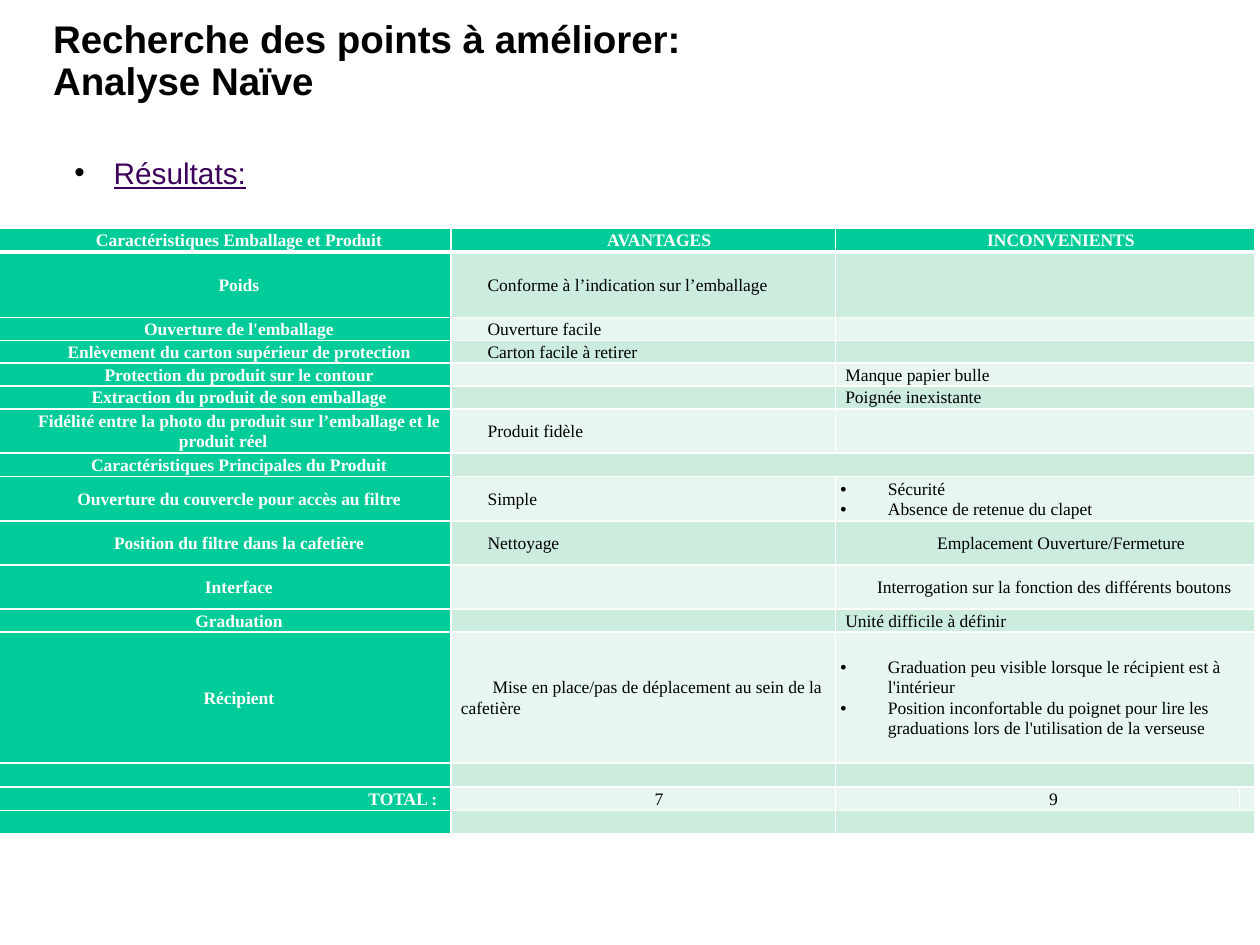
"""Build the slide of good and bad points found by the naive analysis."""
from lxml import etree
from pptx import Presentation
from pptx.dml.color import RGBColor
from pptx.enum.text import MSO_ANCHOR, MSO_AUTO_SIZE, PP_ALIGN
from pptx.oxml.ns import qn
from pptx.util import Cm, Pt

LEFT, MID, RIGHT = PP_ALIGN.LEFT, PP_ALIGN.CENTER, PP_ALIGN.RIGHT
TOP, CENTRE = MSO_ANCHOR.TOP, MSO_ANCHOR.MIDDLE
FIXED = MSO_AUTO_SIZE.NONE

THEME = {
    "sans": "Arial", "serif": "Times New Roman",
    "title": 22, "body": 17, "cell": 10,
    "ink": "000000", "plum": "3C005A", "white": "FFFFFF",
    "green": "00CC99", "bands": ("E7F6EF", "CCECDE"),
    "line": 1, "rule": 3,
}

TITLE = "Recherche des points à améliorer:\vAnalyse Naïve"
LEAD = "Résultats:"

STYLES = {
    "mid": (MID, 0, 0.64),
    "end": (RIGHT, 0, 0),
    "lead": (LEFT, 0, 0.64),
    "near": (LEFT, 0, 0.1),
    "deep": (LEFT, 0.1, 0.64),
    "list": (LEFT, 0.96, -0.96),
}

COLS = (9.19, 7.75, 8.15, 0.28)
ROWS = [
    (0.48, "Caractéristiques Emballage et Produit", ("mid", "AVANTAGES"), ("mid", "INCONVENIENTS")),
    (1.32, "Poids", ("lead", "Conforme à l’indication sur l’emballage"), None),
    (0.46, "Ouverture de l'emballage", ("lead", "Ouverture facile"), None),
    (0.46, "Enlèvement du carton supérieur de protection", ("lead", "Carton facile à retirer"), None),
    (0.46, "Protection du produit sur le contour", None, ("near", "Manque papier bulle")),
    (0.46, "Extraction du produit de son emballage", None, ("near", "Poignée inexistante")),
    (0.89, "Fidélité entre la photo du produit sur l’emballage et le produit réel",
     ("lead", "Produit fidèle"), None),
    (0.48, "Caractéristiques Principales du Produit", None, None),
    (0.89, "Ouverture du couvercle pour accès au filtre", ("lead", "Simple"),
     ("list", "Sécurité\nAbsence de retenue du clapet")),
    (0.89, "Position du filtre dans la cafetière", ("lead", "Nettoyage"),
     ("mid", "Emplacement Ouverture/Fermeture")),
    (0.89, "Interface", None, ("deep", "Interrogation sur la fonction des différents boutons")),
    (0.46, "Graduation", None, ("near", "Unité difficile à définir")),
    (2.64, "Récipient", ("deep", "Mise en place/pas de déplacement au sein de la cafetière"),
     ("list", "Graduation peu visible lorsque le récipient est à l'intérieur\n"
              "Position inconfortable du poignet pour lire les graduations lors de l'utilisation de la verseuse")),
    (0.48, "", None, None),
    (0.48, "TOTAL :", ("mid", "7"), ("mid", "9")),
    (0.46, "", None, None),
]
SECTION, TOTAL = 7, 14


def paint(para, face, size, hue, bold=False, under=False):
    for run in para.runs:
        font = run.font
        font.name, font.size = face, Pt(size)
        font.bold, font.underline = bold, under
        font.color.rgb = RGBColor.from_string(hue)


def indent(para, left, first, bullet=False):
    props = para._p.get_or_add_pPr()
    props.set("marL", str(Cm(left)))
    props.set("indent", str(Cm(first)))
    if bullet:
        hue = etree.SubElement(props, qn("a:buClr"))
        etree.SubElement(hue, qn("a:srgbClr"), val=THEME["ink"])
        etree.SubElement(props, qn("a:buFont"), typeface=THEME["sans"])
        etree.SubElement(props, qn("a:buChar"), char="•")


def place(shape, text, left, top, width, height):
    shape.left, shape.top, shape.width, shape.height = map(Cm, (left, top, width, height))
    frame = shape.text_frame
    frame.margin_left = frame.margin_right = frame.margin_top = frame.margin_bottom = 0
    frame.word_wrap, frame.auto_size, frame.vertical_anchor = True, FIXED, TOP
    frame.text = text
    para = frame.paragraphs[0]
    para.alignment, para.space_before = LEFT, Pt(0)
    return para


def border(cell, head):
    props = cell._tc.get_or_add_tcPr()
    for spot, side in enumerate(("L", "R", "T", "B")):
        width = THEME["rule"] if head and side == "B" else THEME["line"]
        line = etree.Element(qn("a:ln" + side), w=str(Pt(width)))
        fill = etree.SubElement(line, qn("a:solidFill"))
        etree.SubElement(fill, qn("a:srgbClr"), val=THEME["white"])
        props.insert(spot, line)


def write(cell, entry, strong):
    style, text = entry or ("lead", "")
    align, left, first = STYLES[style]
    cell.text = text
    cell.vertical_anchor = CENTRE
    cell.margin_left, cell.margin_top, cell.margin_bottom = Cm(0.1), 0, 0
    cell.margin_right = Cm(0.28 if style == "end" else 0.1)
    for para in cell.text_frame.paragraphs:
        para.alignment, para.line_spacing = align, 1.07
        indent(para, left, first, style == "list")
        paint(para, THEME["serif"], THEME["cell"], THEME["white" if strong else "ink"], strong)
        if not text:
            para._p.get_or_add_endParaRPr().set("sz", str(THEME["cell"] * 100))


def fill_table(slide):
    high = sum(row[0] for row in ROWS)
    table = slide.shapes.add_table(
        len(ROWS), len(COLS), Cm(-0.1), Cm(4.6), Cm(sum(COLS)), Cm(high)).table
    table.first_row = table.horz_banding = False
    for col, width in zip(table.columns, COLS):
        col.width = Cm(width)
    for r, (height, label, good, bad) in enumerate(ROWS):
        table.rows[r].height = Cm(height)
        name = ("end" if r == TOTAL else "mid", label)
        for c, entry in enumerate((name, good, bad, None)):
            cell, strong = table.cell(r, c), r == 0 or c == 0
            write(cell, entry, strong)
            cell.fill.solid()
            hue = THEME["green"] if strong else THEME["bands"][r % 2]
            cell.fill.fore_color.rgb = RGBColor.from_string(hue)
            border(cell, r == 0)
        if r != TOTAL:
            table.cell(r, 1 if r == SECTION else 2).merge(table.cell(r, 3))


def main():
    deck = Presentation()
    deck.slide_width, deck.slide_height = Cm(25.4), Cm(19.05)
    slide = deck.slides.add_slide(deck.slide_layouts[1])
    head = place(slide.shapes.title, TITLE, 1.07, 0.41, 17.75, 2.51)
    head.line_spacing = 0.9
    paint(head, THEME["sans"], THEME["title"], THEME["ink"], bold=True)
    lead = place(slide.placeholders[1], LEAD, 1.5, 3.12, 22.94, 13.21)
    indent(lead, 0.79, -0.79, bullet=True)
    paint(lead, THEME["sans"], THEME["body"], THEME["plum"], under=True)
    fill_table(slide)
    deck.save("out.pptx")


if __name__ == "__main__":
    main()
